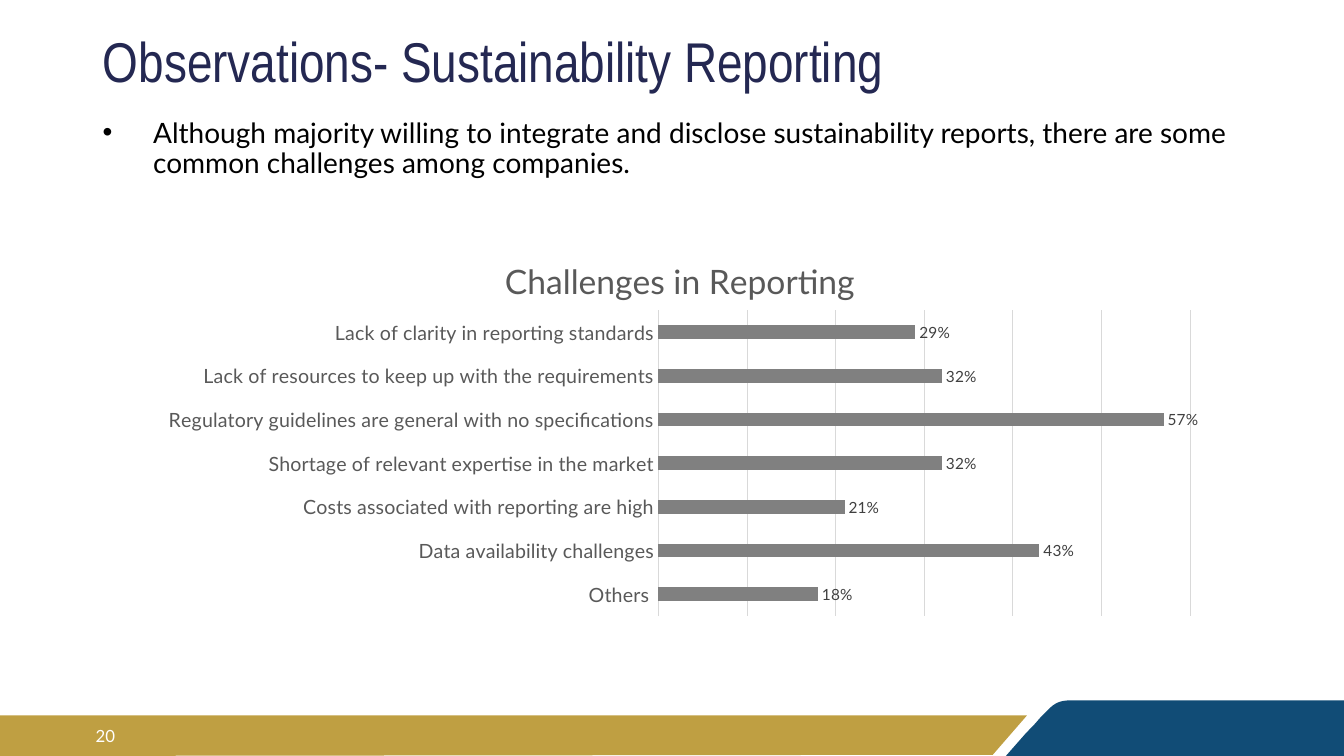
from lxml.etree import SubElement
from pptx import Presentation
from pptx.chart.data import CategoryChartData
from pptx.dml.color import RGBColor
from pptx.enum.chart import XL_CHART_TYPE as ChartType, XL_LABEL_POSITION as LabelPosition
from pptx.enum.chart import XL_TICK_MARK as TickMark
from pptx.enum.text import MSO_ANCHOR as Anchor, MSO_AUTO_SIZE as AutoSize, PP_ALIGN as Align
from pptx.oxml import parse_xml
from pptx.oxml.ns import nsdecls, qn
from pptx.util import Cm, Pt

TITLE = "Observations- Sustainability Reporting"
BODY = ("Although majority willing to integrate and disclose sustainability reports, "
        "there are some common challenges among companies.")
PAGE_NUMBER = "20"
CHART_TITLE = "Challenges in Reporting"
CHALLENGES = [
    ("Lack of clarity in reporting standards", 0.29),
    ("Lack of resources to keep up with the requirements", 0.32),
    ("Regulatory guidelines are general with no specifications", 0.57),
    ("Shortage of relevant expertise in the market", 0.32),
    ("Costs associated with reporting are high", 0.21),
    ("Data availability challenges", 0.43),
    (" Others ", 0.18),
]
SLIDE_WIDTH, SLIDE_HEIGHT = 33.87, 19.05
TITLE_BOX = (2.34, 0.61, 29.21, 2.03)
BODY_BOX = (2.34, 2.87, 30.02, 1.8)
NUMBER_BOX = (1.52, 18.03, 1.63, 1.02)
CHART_BOX = (3.73, 5.72, 26.8, 10.01)
GOLD_BAND = [(0, 18.03), (25.88, 18.03), (25.02, 19.02), (0, SLIDE_HEIGHT)]
BLUE_EDGE = [(26.97, 17.65), (SLIDE_WIDTH, 17.65), (SLIDE_WIDTH, SLIDE_HEIGHT),
             (25.35, SLIDE_HEIGHT), (25.86, 18.47)]
BLUE_CURVES = [
    [(25.86, 18.47), (26.19, 18.14), (26.14, 18.16), (26.29, 18.01)],
    [(26.29, 18.01), (26.52, 17.78), (26.62, 17.65), (26.97, 17.65)],
]


def color(value):
    return RGBColor.from_string(value)


def lengths(values):
    return [Cm(value) for value in values]


def curve_points(controls, steps=10):
    points = []
    for step in range(1, steps + 1):
        t = step / steps
        weights = ((1 - t) ** 3, 3 * t * (1 - t) ** 2, 3 * t * t * (1 - t), t ** 3)
        points.append(tuple(sum(weight * control[axis] for weight, control in zip(weights, controls))
                            for axis in (0, 1)))
    return points


def format_font(font, size, fill, name="Lato"):
    font.size, font.name, font.bold = Pt(size), name, False
    font.color.rgb = color(fill)


def write_text(frame, text, size, fill, name="Lato", align=Align.LEFT,
               anchor=Anchor.TOP, spacing=1.0, bullet=None):
    frame.word_wrap = True
    frame.auto_size = AutoSize.NONE
    frame.vertical_anchor = anchor
    frame.text = text
    paragraph = frame.paragraphs[0]
    if bullet:
        properties = paragraph._p.get_or_add_pPr()
        properties.set("marL", str(Cm(1.27)))
        properties.set("indent", str(-Cm(1.27)))
        SubElement(properties, qn("a:buFont")).set("typeface", "Arial")
        SubElement(properties, qn("a:buChar")).set("char", bullet)
    paragraph.alignment = align
    paragraph.line_spacing = spacing
    format_font(paragraph.runs[0].font, size, fill, name)


def add_band(slide, points, fill):
    start, *rest = [lengths(point) for point in points]
    builder = slide.shapes.build_freeform(*start, scale=1.0)
    builder.add_line_segments(rest, close=True)
    shape = builder.convert_to_shape()
    shape.shadow.inherit = False
    shape.fill.solid()
    shape.fill.fore_color.rgb = color(fill)
    shape.line.fill.background()


def manual_layout(element, after=None, target=None, **fractions):
    for old in element.findall(qn("c:layout")):
        element.remove(old)
    layout = parse_xml(f"<c:layout {nsdecls('c')}><c:manualLayout/></c:layout>")
    manual = layout[0]
    if target:
        SubElement(manual, qn("c:layoutTarget")).set("val", target)
    for key in ("xMode", "yMode"):
        SubElement(manual, qn(f"c:{key}")).set("val", "edge")
    for key, value in fractions.items():
        SubElement(manual, qn(f"c:{key}")).set("val", str(value))
    if after is None:
        element.insert(0, layout)
    else:
        after.addnext(layout)


def add_challenges_chart(slide):
    data = CategoryChartData(number_format="0%")
    data.categories = [label for label, share in CHALLENGES]
    data.add_series("Series 1", [share for label, share in CHALLENGES])
    chart = slide.shapes.add_chart(ChartType.BAR_CLUSTERED, *lengths(CHART_BOX), data).chart
    format_font(chart.font, 11, "000000")
    chart.has_legend = False
    chart.has_title = True
    write_text(chart.chart_title.text_frame, CHART_TITLE, 24, "595959", align=Align.CENTER)
    title = chart.chart_title._element
    manual_layout(title, after=title.find(qn("c:tx")), x=0.33, y=0.06)
    plot_area = chart._chartSpace.chart.plotArea
    manual_layout(plot_area, target="inner", x=0.48, y=0.21, w=0.5, h=0.77)

    categories = chart.category_axis
    categories.reverse_order = True
    categories.major_tick_mark = categories.minor_tick_mark = TickMark.NONE
    categories.has_major_gridlines = False
    format_font(categories.tick_labels.font, 14, "595959")
    values = chart.value_axis
    values.minimum_scale, values.maximum_scale, values.major_unit = 0, 0.6, 0.1
    values.has_major_gridlines = True
    values.visible = False
    for line in (categories.format.line, values.major_gridlines.format.line):
        line.color.rgb = color("D9D9D9")
        line.width = Pt(0.75)

    plot = chart.plots[0]
    plot.gap_width = 219
    plot.vary_by_categories = False
    series = plot.series[0]
    series.format.fill.solid()
    series.format.fill.fore_color.rgb = color("808080")
    labels = series.data_labels
    labels.show_value = True
    labels.position = LabelPosition.OUTSIDE_END
    labels.number_format, labels.number_format_is_linked = "0%", False
    format_font(labels.font, 11, "404040")


def main():
    presentation = Presentation()
    presentation.slide_width, presentation.slide_height = lengths((SLIDE_WIDTH, SLIDE_HEIGHT))
    slide = presentation.slides.add_slide(presentation.slide_layouts[5])

    blue_points = BLUE_EDGE + [point for curve in BLUE_CURVES for point in curve_points(curve)]
    add_band(slide, blue_points[:-1], "114C76")
    add_band(slide, GOLD_BAND, "BF9F42")

    title = slide.shapes.title
    title.left, title.top, title.width, title.height = lengths(TITLE_BOX)
    write_text(title.text_frame, TITLE, 40, "242852", name="Arial Narrow",
               anchor=Anchor.MIDDLE, spacing=0.9)
    number = slide.shapes.add_textbox(*lengths(NUMBER_BOX))
    write_text(number.text_frame, PAGE_NUMBER, 12, "FFFFFF", align=Align.RIGHT, anchor=Anchor.MIDDLE)
    body = slide.shapes.add_textbox(*lengths(BODY_BOX))
    write_text(body.text_frame, BODY, 20, "000000", spacing=0.9, bullet="•")
    add_challenges_chart(slide)
    presentation.save("out.pptx")


if __name__ == "__main__":
    main()
